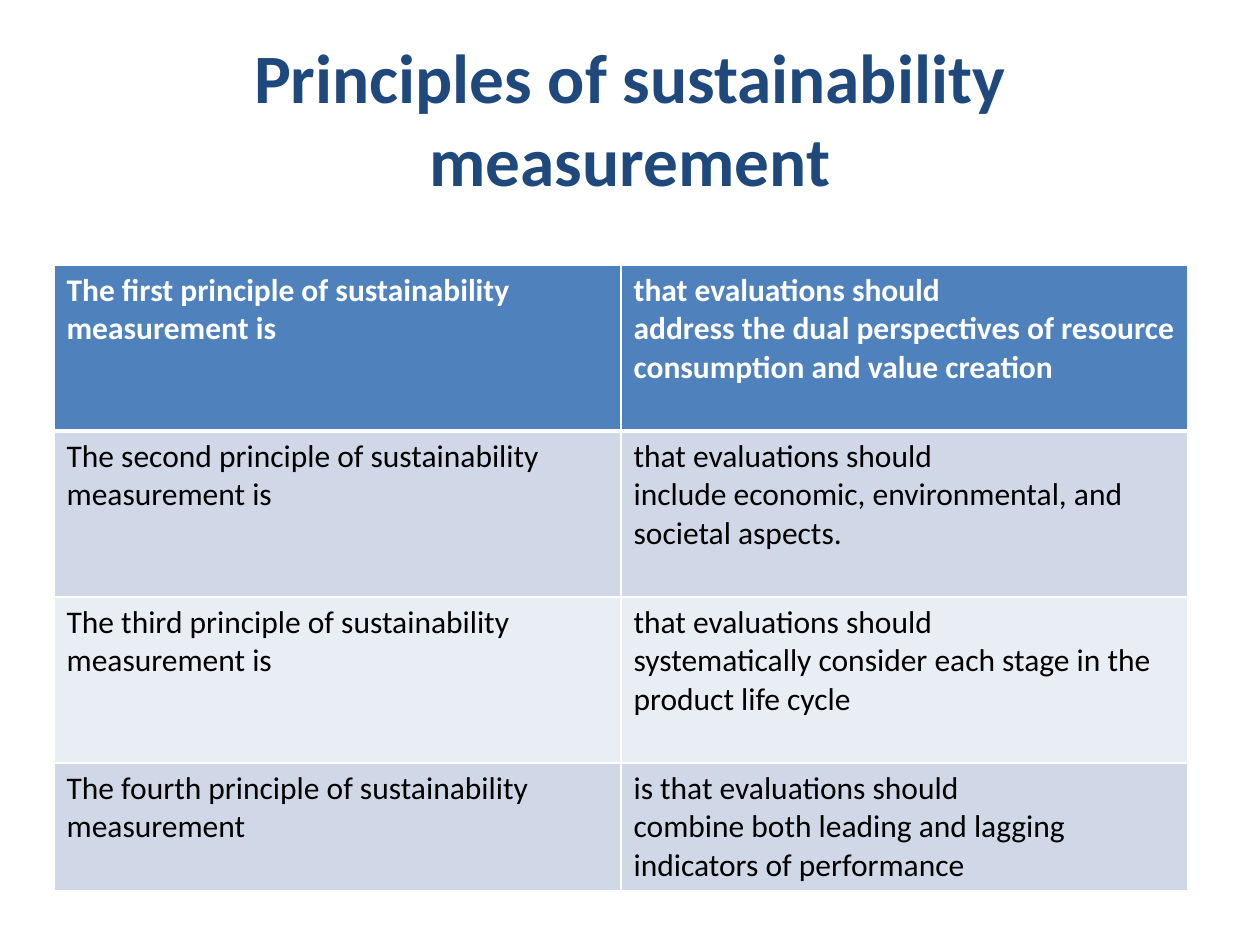
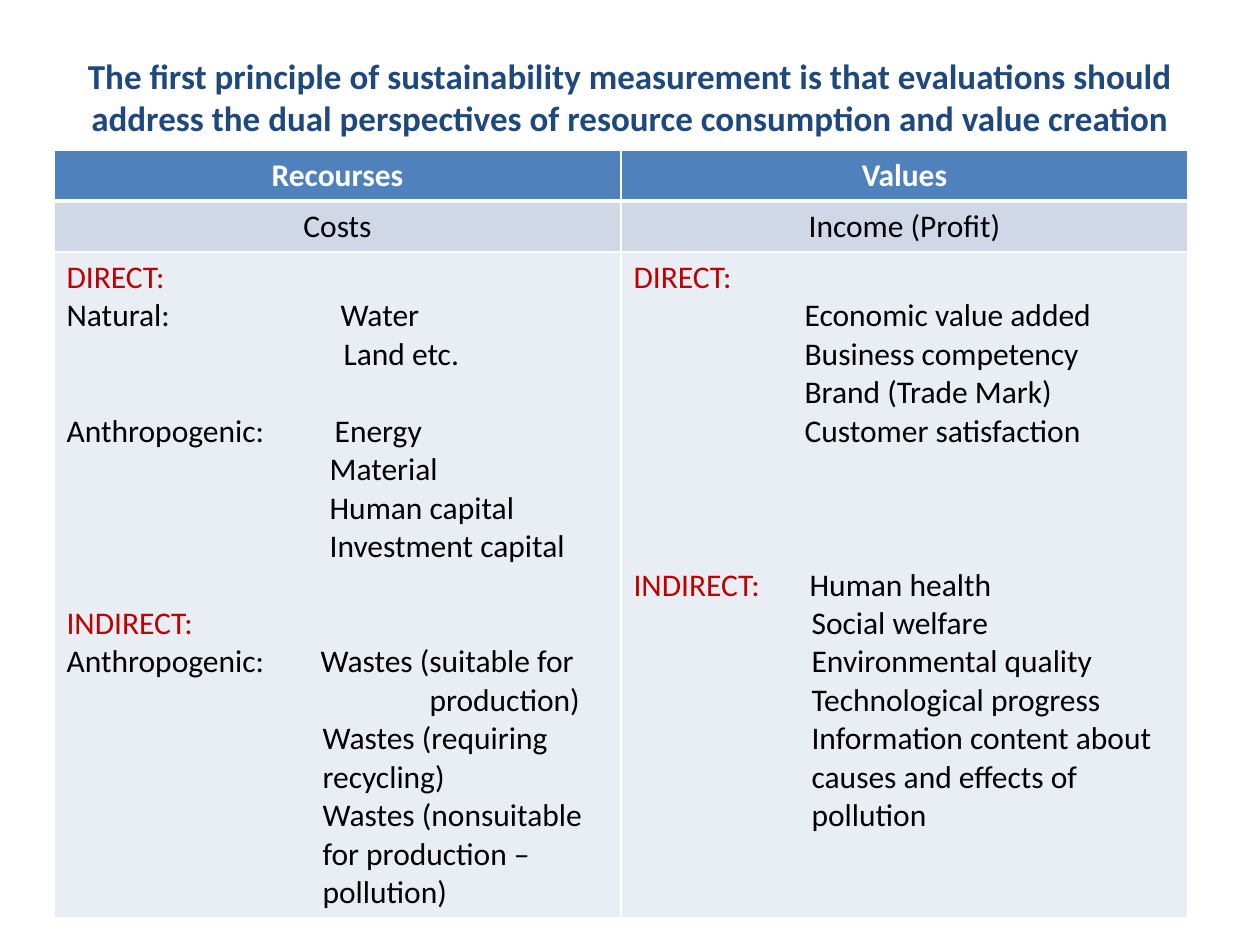
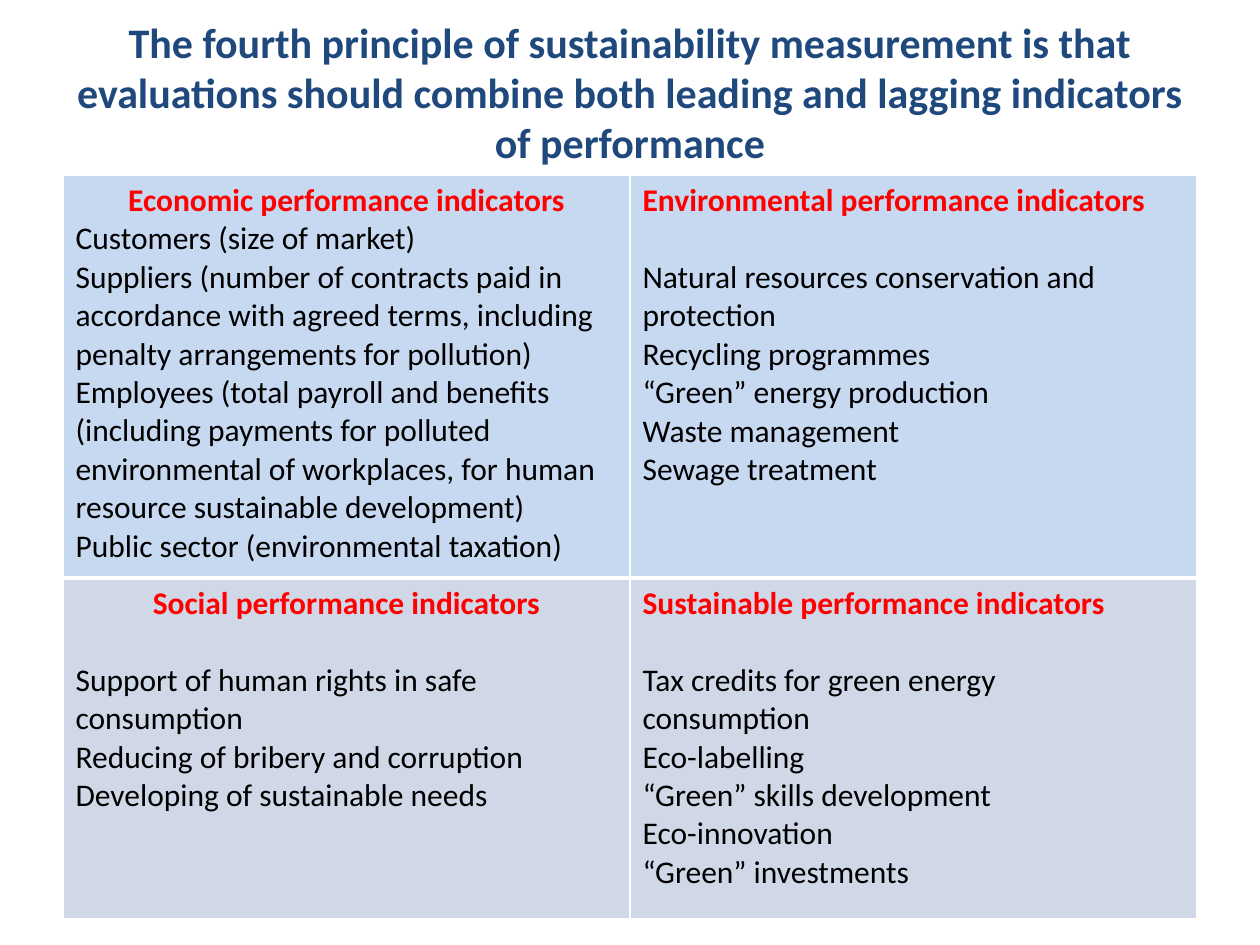
from dataclasses import dataclass

from lxml import etree
from pptx import Presentation
from pptx.dml.color import RGBColor
from pptx.enum.text import MSO_ANCHOR, PP_ALIGN
from pptx.oxml.ns import qn
from pptx.util import Emu, Pt

EMU_PER_PX = 914400 / 126
MIDDLE = MSO_ANCHOR.MIDDLE
LEFT, CENTER = PP_ALIGN.LEFT, PP_ALIGN.CENTER

FONT = "Calibri"
BODY_SIZE = 18
LINE_PT = 22
NAVY, BLUE, WHITE, BLACK = "1F497D", "4F81BD", "FFFFFF", "000000"
BAND_DARK, BAND_LIGHT, SKY = "D0D8E8", "E9EDF4", "C6D9F1"
CRIMSON, RED = "C00000", "FF0000"
COLUMN_WIDTH = 567
THIN, THICK = 1, 3


@dataclass(frozen=True)
class Line:
    """One paragraph; offset is where its text starts, gap the empty lines above."""
    text: str
    color: str = BLACK
    bold: bool = False
    align: PP_ALIGN = LEFT
    label: str = ""
    label_color: str = BLACK
    offset: int = 0
    gap: int = 0


Cell = list[Line]


@dataclass(frozen=True)
class Row:
    height: int
    fill: str
    cells: list[Cell]


@dataclass(frozen=True)
class TableSlide:
    title: str
    title_size: float
    title_lift: int
    left: int
    top: int
    rows: list[Row]


def px(length: float) -> Emu:
    return Emu(round(length * EMU_PER_PX))


def rgb(color: str) -> RGBColor:
    return RGBColor.from_string(color)


def add_text(paragraph, text: str, *, size: float = BODY_SIZE,
             color: str = BLACK, bold: bool = False) -> None:
    run = paragraph.add_run()
    run.text = text
    run.font.name = FONT
    run.font.size = Pt(size)
    run.font.bold = bold
    run.font.color.rgb = rgb(color)


def add_title(slide, title: str, size: float, lift: int) -> None:
    """Centre the title in the band above the table, raised by extra bottom inset."""
    box = slide.shapes.add_textbox(px(63), px(38), px(1134), px(158))
    frame = box.text_frame
    frame.word_wrap = True
    frame.vertical_anchor = MIDDLE
    frame.margin_bottom = px(6 + lift)
    heading = frame.paragraphs[0]
    heading.alignment = CENTER
    add_text(heading, title, size=size, color=NAVY, bold=True)


def write_line(paragraph, line: Line) -> None:
    paragraph.alignment = line.align
    if line.gap:
        paragraph.space_before = Pt(line.gap * LINE_PT)
    properties = paragraph._p.get_or_add_pPr()
    if line.label:
        tabs = etree.SubElement(properties, qn("a:tabLst"))
        etree.SubElement(tabs, qn("a:tab"), pos=str(px(line.offset)), algn="l")
        add_text(paragraph, line.label + "\t", color=line.label_color)
    elif line.offset:
        properties.set("marL", str(px(line.offset)))
        properties.set("indent", "0")
    add_text(paragraph, line.text, color=line.color, bold=line.bold)


def set_borders(cell, top: int, bottom: int) -> None:
    properties = cell._tc.get_or_add_tcPr()
    for side, width in (("L", THIN), ("R", THIN), ("T", top), ("B", bottom)):
        border = etree.SubElement(properties, qn(f"a:ln{side}"), w=str(Pt(width)))
        fill = etree.SubElement(border, qn("a:solidFill"))
        etree.SubElement(fill, qn("a:srgbClr"), val=WHITE)


def fill_cell(cell, lines: Cell, fill: str, row_index: int) -> None:
    set_borders(cell, top=THICK if row_index == 1 else THIN,
                bottom=THICK if row_index == 0 else THIN)
    cell.fill.solid()
    cell.fill.fore_color.rgb = rgb(fill)
    frame = cell.text_frame
    for index, line in enumerate(lines):
        write_line(frame.add_paragraph() if index else frame.paragraphs[0], line)


def add_grid(slide, content: TableSlide) -> None:
    rows = content.rows
    column_count = len(rows[0].cells)
    table = slide.shapes.add_table(
        len(rows), column_count, px(content.left), px(content.top),
        px(COLUMN_WIDTH * column_count), px(sum(row.height for row in rows))).table
    table.first_row = False
    table.horz_banding = False
    for column in table.columns:
        column.width = px(COLUMN_WIDTH)
    for row_index, row in enumerate(rows):
        table.rows[row_index].height = px(row.height)
        for column_index, lines in enumerate(row.cells):
            fill_cell(table.cell(row_index, column_index), lines, row.fill, row_index)


def plain(*texts: str, offset: int = 0, gap: int = 0, color: str = BLACK,
          bold: bool = False, align: PP_ALIGN = LEFT) -> Cell:
    """Lines of one format; the gap stands above the first."""
    return [Line(text, color, bold, align, offset=offset, gap=0 if index else gap)
            for index, text in enumerate(texts)]


def centered(text: str, color: str = BLACK, bold: bool = False) -> Cell:
    return plain(text, color=color, bold=bold, align=CENTER)


def indicators(heading: str, *items: str, align: PP_ALIGN = LEFT, gap: int = 1) -> Cell:
    return plain(heading, color=RED, bold=True, align=align) + plain(*items, gap=gap)


def principle_row(height: int, fill: str, subject: str, *statement: str,
                  color: str = BLACK, bold: bool = False) -> Row:
    return Row(height, fill, [plain(subject, color=color, bold=bold),
                              plain(*statement, color=color, bold=bold)])


PRINCIPLES = [
    principle_row(166, BLUE, "The first principle of sustainability measurement is",
                  "that evaluations should",
                  "address the dual perspectives of resource consumption and value creation",
                  color=WHITE, bold=True),
    principle_row(166, BAND_DARK, "The second principle of sustainability measurement is",
                  "that evaluations should",
                  "include economic, environmental, and societal aspects."),
    principle_row(166, BAND_LIGHT, "The third principle of sustainability measurement is",
                  "that evaluations should",
                  "systematically consider each stage in the product life cycle"),
    principle_row(128, BAND_DARK, "The fourth principle of sustainability measurement",
                  "is that evaluations should",
                  "combine both leading and lagging indicators of performance"),
]

RESOURCES = [
    Line("DIRECT:", CRIMSON),
    Line("Water", label="Natural:", offset=274),
    Line("Land etc.", offset=277),
    Line("Energy", label="Anthropogenic:", offset=268, gap=1),
    *plain("Material", "Human capital", "Investment capital", offset=263),
    Line("INDIRECT:", CRIMSON, gap=1),
    Line("Wastes (suitable for", label="Anthropogenic:", offset=254),
    Line("production)", offset=363),
    *plain("Wastes (requiring", "recycling)", "Wastes (nonsuitable",
           "for production –", "pollution)", offset=256),
]

VALUES = [
    Line("DIRECT:", CRIMSON),
    *plain("Economic value added", "Business competency", "Brand (Trade Mark)",
           "Customer satisfaction", offset=171),
    Line("Human health", label="INDIRECT:", label_color=CRIMSON, offset=176, gap=3),
    *plain("Social welfare", "Environmental quality", "Technological progress",
           "Information content about", "causes and effects of", "pollution", offset=178),
]

PERSPECTIVES = [
    Row(51, BLUE, [centered("Recourses", WHITE, True), centered("Values", WHITE, True)]),
    Row(51, BAND_DARK, [centered("Costs"), centered("Income (Profit)")]),
    Row(666, BAND_LIGHT, [RESOURCES, VALUES]),
]

INDICATORS = [
    Row(403, SKY, [
        indicators("Economic performance indicators",
                   "Customers (size of market)",
                   "Suppliers (number of contracts paid in accordance with agreed terms, "
                   "including penalty arrangements for pollution)",
                   "Employees (total payroll and benefits (including payments for polluted "
                   "environmental of workplaces, for human resource sustainable development)",
                   "Public sector (environmental taxation)", align=CENTER, gap=0),
        indicators("Environmental performance indicators",
                   "Natural resources conservation and protection",
                   "Recycling programmes", "“Green” energy production",
                   "Waste management", "Sewage treatment"),
    ]),
    Row(341, BAND_DARK, [
        indicators("Social performance indicators",
                   "Support of human rights in safe consumption",
                   "Reducing of bribery and corruption",
                   "Developing of sustainable needs", align=CENTER),
        indicators("Sustainable performance indicators",
                   "Tax credits for green energy", "consumption", "Eco-labelling",
                   "“Green” skills development", "Eco-innovation", "“Green” investments"),
    ]),
]

SLIDES = [
    TableSlide("Principles of sustainability measurement", 39.6, 0, 54, 265, PRINCIPLES),
    TableSlide("The first principle of sustainability measurement is that evaluations should "
               "address the dual perspectives of resource consumption and value creation",
               20, 42, 54, 150, PERSPECTIVES),
    TableSlide("The fourth principle of sustainability measurement is that evaluations should "
               "combine both leading and lagging indicators of performance",
               24, 51, 63, 175, INDICATORS),
]


def main() -> None:
    deck = Presentation()
    deck.slide_width, deck.slide_height = px(1260), px(945)
    blank = deck.slide_layouts[6]
    for content in SLIDES:
        slide = deck.slides.add_slide(blank)
        add_title(slide, content.title, content.title_size, content.title_lift)
        add_grid(slide, content)
    deck.save("out.pptx")


if __name__ == "__main__":
    main()
